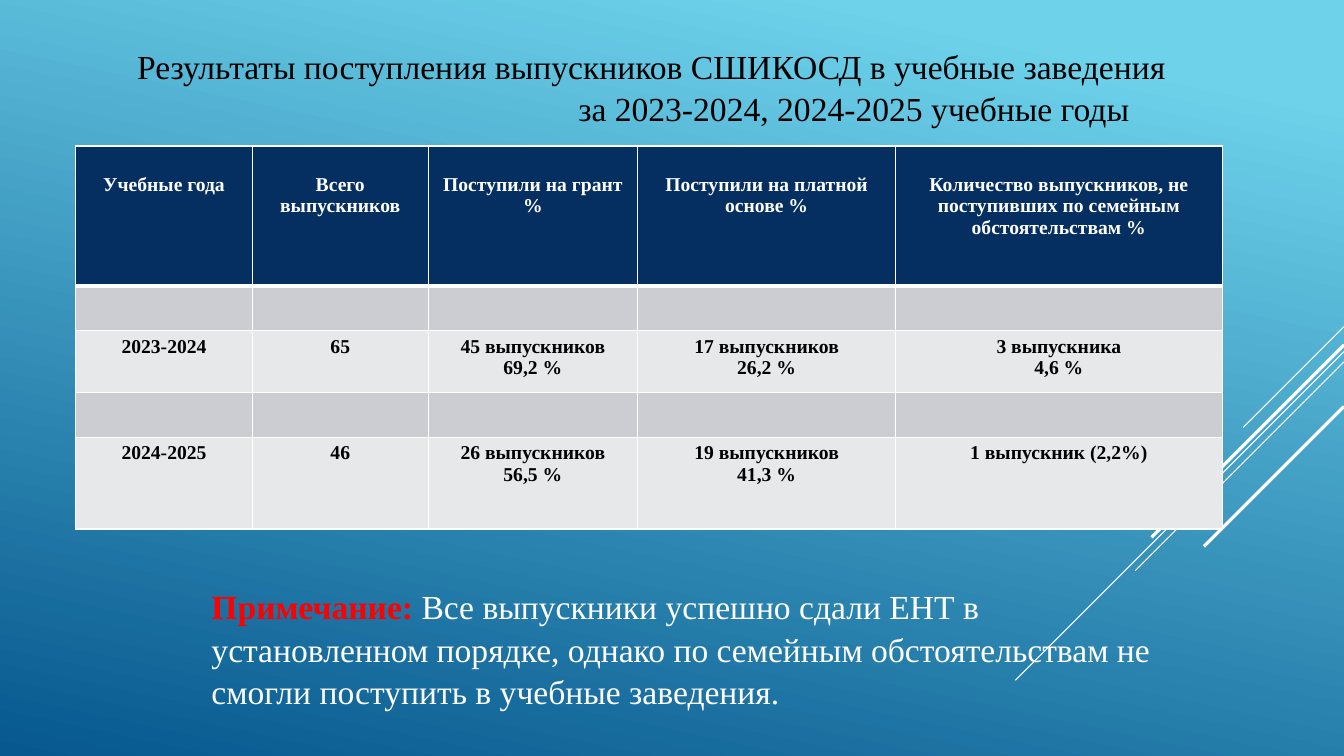
"""Build the slide on where school graduates were admitted."""
from lxml.etree import SubElement
from pptx import Presentation
from pptx.dml.color import RGBColor
from pptx.enum.shapes import MSO_CONNECTOR as Connector
from pptx.enum.text import MSO_ANCHOR as Anchor, MSO_AUTO_SIZE as AutoSize, PP_ALIGN as Align
from pptx.oxml import parse_xml
from pptx.oxml.ns import nsdecls, qn
from pptx.util import Cm, Pt

FONT = "Times New Roman"
BLACK = RGBColor(0x00, 0x00, 0x00)
WHITE = RGBColor(0xFF, 0xFF, 0xFF)
RED = RGBColor(0xFF, 0x00, 0x00)
NAVY = RGBColor(0x05, 0x2F, 0x61)
DARK_BAND = RGBColor(0xCC, 0xCD, 0xD2)
LIGHT_BAND = RGBColor(0xE7, 0xE8, 0xEA)
SKY = RGBColor(0x6E, 0xD2, 0xEB)
DEEP_BLUE = RGBColor(0x06, 0x58, 0x8E)

TITLE = [
    "Результаты поступления выпускников СШИКОСД в учебные заведения",
    "за 2023-2024, 2024-2025 учебные годы",
]
NOTE = [
    ("Примечание: ", RED, True),
    ("Все выпускники успешно сдали ЕНТ в установленном порядке, однако по семейным "
     "обстоятельствам не смогли поступить в учебные заведения.", WHITE, False),
]
BLANK_ROW = [""] * 5
ROWS = [
    ["Учебные года", "Всего выпускников", "Поступили на грант %",
     "Поступили на платной основе %",
     "Количество выпускников, не поступивших по семейным обстоятельствам %"],
    BLANK_ROW,
    ["2023-2024", "65", "45 выпускников\n69,2 %", "17 выпускников\n26,2 %",
     "3 выпускника\n4,6 %"],
    BLANK_ROW,
    ["2024-2025", "46", "26 выпускников\n56,5 %", "19 выпускников\n41,3 %",
     "1 выпускник (2,2%)"],
]
COLUMN_WIDTHS = [4.45, 4.43, 5.28, 6.5, 8.23]
ROW_HEIGHTS = [3.53, 1.12, 1.57, 1.12, 2.31]
SLIDE_WIDTH, SLIDE_HEIGHT = 33.87, 19.05
# start height on the right edge, run to the left and down, thickness
DIAGONALS = [(8.23, 2.54, 0.75), (8.86, 8.28, 0.75), (9.12, 5.26, 0.75),
             (8.69, 4.85, 2.25), (10.24, 3.53, 2.25)]


def format_span(span, size, color, bold=False):
    span.font.name = FONT
    span.font.size = Pt(size)
    span.font.bold = bold
    span.font.color.rgb = color


def paint_background(page):
    fill = page.background.fill
    fill.gradient()
    fill.gradient_angle = 258
    for stop, position, color in zip(fill.gradient_stops, (0.1, 1), (SKY, DEEP_BLUE)):
        stop.position = position
        stop.color.rgb = color


def add_diagonals(page):
    for top, run, weight in DIAGONALS:
        line = page.shapes.add_connector(Connector.STRAIGHT, Cm(SLIDE_WIDTH), Cm(top),
                                         Cm(SLIDE_WIDTH - run), Cm(top + run))
        line.line.color.rgb = WHITE
        line.line.width = Pt(weight)
        SubElement(line._element.spPr, qn("a:effectLst"))


def fill_title(page):
    box = page.shapes.title
    box.left, box.top, box.width, box.height = Cm(3.12), Cm(0.89), Cm(26.59), Cm(2.57)
    frame = box.text_frame
    frame.text = "\n".join(TITLE)
    frame.word_wrap = True
    frame.auto_size = AutoSize.NONE
    frame.vertical_anchor = Anchor.MIDDLE
    for para in frame.paragraphs:
        para.alignment = Align.CENTER
        para.line_spacing = 1.05
        para.space_before = Pt(0)
        format_span(para.runs[0], 24, BLACK)
    frame.paragraphs[1]._p.get_or_add_pPr().set("marL", str(Cm(10.2)))


def set_borders(cell, weights):
    properties = cell._tc.get_or_add_tcPr()
    for index, (side, weight) in enumerate(zip("LRTB", weights)):
        properties.insert(index, parse_xml(
            f'<a:ln{side} {nsdecls("a")} w="{Pt(weight)}"><a:solidFill>'
            f'<a:srgbClr val="{WHITE}"/></a:solidFill></a:ln{side}>'))


def add_results(page):
    table = page.shapes.add_table(len(ROWS), len(COLUMN_WIDTHS), Cm(1.91), Cm(3.68),
                                  Cm(sum(COLUMN_WIDTHS)), Cm(sum(ROW_HEIGHTS))).table
    for column, width in zip(table.columns, COLUMN_WIDTHS):
        column.width = Cm(width)
    for index, (row, height, texts) in enumerate(zip(table.rows, ROW_HEIGHTS, ROWS)):
        row.height = Cm(height)
        header = index == 0
        color = NAVY if header else DARK_BAND if index % 2 else LIGHT_BAND
        for cell, text in zip(row.cells, texts):
            cell.text = text
            cell.fill.solid()
            cell.fill.fore_color.rgb = color
            set_borders(cell, (1, 1, 3 if index == 1 else 1, 3 if header else 1))
            if header:
                cell.margin_top = Cm(0.7)
            for para in cell.text_frame.paragraphs:
                para.alignment = Align.CENTER
                for span in para.runs:
                    format_span(span, 14, WHITE if header else BLACK, True)


def add_note(page):
    box = page.shapes.add_textbox(Cm(5.08), Cm(14.6), Cm(25.2), Cm(3.33))
    box.text_frame.word_wrap = True
    para = box.text_frame.paragraphs[0]
    para.line_spacing = 1.05
    for text, color, bold in NOTE:
        span = para.add_run()
        span.text = text
        format_span(span, 24, color, bold)


def main():
    deck = Presentation()
    deck.slide_width, deck.slide_height = Cm(SLIDE_WIDTH), Cm(SLIDE_HEIGHT)
    page = deck.slides.add_slide(deck.slide_layouts.get_by_name("Title Only"))
    paint_background(page)
    add_diagonals(page)
    fill_title(page)
    add_results(page)
    add_note(page)
    deck.save("out.pptx")


if __name__ == "__main__":
    main()
